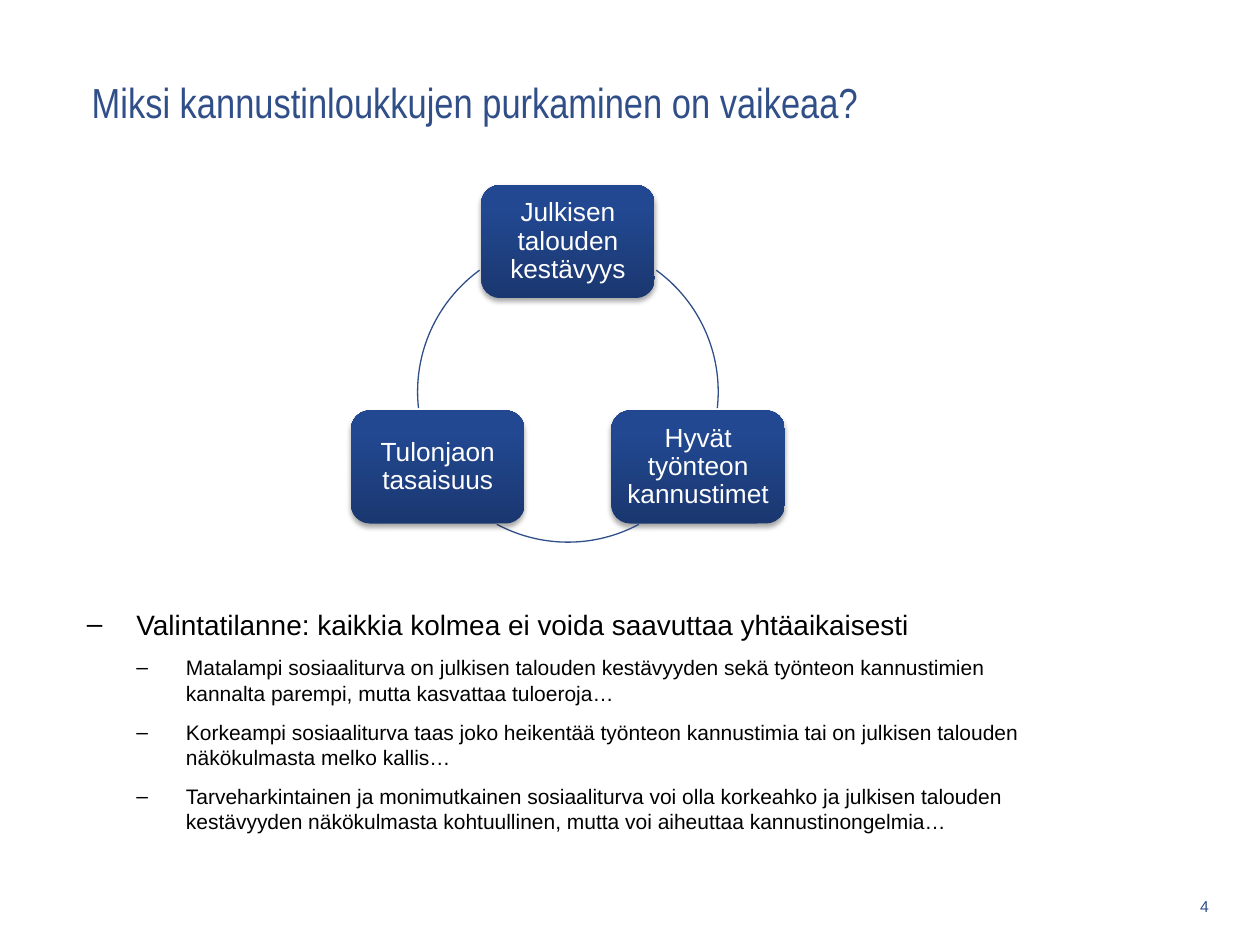
from copy import deepcopy
from dataclasses import dataclass
from math import cos, radians, sin

from lxml.etree import SubElement as Sub
from pptx import Presentation
from pptx.dml.color import RGBColor as Rgb
from pptx.enum.shapes import MSO_SHAPE as Kind
from pptx.enum.text import MSO_ANCHOR as Anchor, PP_ALIGN as Align
from pptx.oxml.ns import qn
from pptx.slide import Slide
from pptx.text.text import TextFrame as Frame, _Paragraph as Para
from pptx.util import Cm, Pt


@dataclass(frozen=True)
class Theme:
    blue: str = "304E88"
    black: str = "000000"
    white: str = "FFFFFF"
    shade: tuple = ((0, "1A376F"), (0.8, "224891"), (1, "204793"))
    sans: str = "Arial"
    slim: str = "Arial Narrow"
    title: float = 24
    lead: float = 16
    node: float = 15
    point: float = 12
    page: float = 9


@dataclass(frozen=True)
class Ring:
    x: float = 11.45
    y: float = 7.9
    r: float = 3.03


@dataclass(frozen=True)
class Node:
    text: str
    angle: float
    wide: float = 3.5
    high: float = 2.28


@dataclass(frozen=True)
class Item:
    text: str
    level: int
    size: float


LOOK = Theme()
RING = Ring()
NODES = (
    Node("Julkisen talouden kestävyys", -90),
    Node("Hyvät työnteon kannustimet", 30),
    Node("Tulonjaon tasaisuus", 150),
)
ARCS = ((306, 6.2), (61.8, 118.2), (173.8, 234))
ITEMS = (
    Item("Valintatilanne: kaikkia kolmea ei voida saavuttaa yhtäaikaisesti", 0, LOOK.lead),
    Item("Matalampi sosiaaliturva on julkisen talouden kestävyyden sekä työnteon "
         "kannustimien kannalta parempi, mutta kasvattaa tuloeroja…", 1, LOOK.point),
    Item("Korkeampi sosiaaliturva taas joko heikentää työnteon kannustimia tai on "
         "julkisen talouden näkökulmasta melko kallis…", 1, LOOK.point),
    Item("Tarveharkintainen ja monimutkainen sosiaaliturva voi olla korkeahko ja "
         "julkisen talouden kestävyyden näkökulmasta kohtuullinen, mutta voi aiheuttaa "
         "kannustinongelmia…", 1, LOOK.point),
)


def style(para: Para, size: float, color: str, face: str = LOOK.sans) -> None:
    for run in para.runs:
        run.font.size = Pt(size)
        run.font.name = face
        run.font.color.rgb = Rgb.from_string(color)


def add_text(slide: Slide, x: float, y: float, w: float, h: float,
             anchor: Anchor = Anchor.MIDDLE) -> Frame:
    frame = slide.shapes.add_textbox(Cm(x), Cm(y), Cm(w), Cm(h)).text_frame
    frame.word_wrap = True
    frame.vertical_anchor = anchor
    return frame


def add_item(para: Para, item: Item) -> None:
    para.text = item.text
    para.level = item.level
    props = para._p.get_or_add_pPr()
    props.set("marL", str(Cm(1 + item.level)))
    props.set("indent", str(Cm(-1)))
    Sub(props, qn("a:buFont"), typeface=LOOK.sans)
    Sub(props, qn("a:buChar"), char="‒")
    para.space_after = Pt(8)
    style(para, item.size, LOOK.black)


def add_node(slide: Slide, node: Node) -> None:
    turn = radians(node.angle)
    left = RING.x + RING.r * cos(turn) - node.wide / 2
    top = RING.y + RING.r * sin(turn) - node.high / 2
    box = slide.shapes.add_shape(Kind.ROUNDED_RECTANGLE, Cm(left), Cm(top),
                                 Cm(node.wide), Cm(node.high))
    box.fill.gradient()
    box.fill.gradient_angle = 90
    stops = box._element.spPr.find(".//" + qn("a:gsLst"))
    stops.append(deepcopy(stops[0]))
    for stop, (place, color) in zip(box.fill.gradient_stops, LOOK.shade):
        stop.position = place
        stop.color.rgb = Rgb.from_string(color)
    box.line.fill.background()
    box.shadow.inherit = False
    glow = Sub(box._element.spPr.find(qn("a:effectLst")), qn("a:outerShdw"),
               blurRad=str(Pt(3.1)), dist=str(Pt(1.8)), dir="5400000", rotWithShape="0")
    tint = Sub(glow, qn("a:srgbClr"), val=LOOK.black)
    Sub(tint, qn("a:alpha"), val="35000")
    frame = box.text_frame
    frame.word_wrap = True
    frame.vertical_anchor = Anchor.MIDDLE
    frame.margin_left = frame.margin_right = Cm(0.1)
    frame.margin_top = frame.margin_bottom = Cm(0.1)
    frame.text = node.text
    para = frame.paragraphs[0]
    para.alignment = Align.CENTER
    para.line_spacing = 0.9
    style(para, LOOK.node, LOOK.white)


def add_arc(slide: Slide, start: float, end: float) -> None:
    arc = slide.shapes.add_shape(Kind.ARC, Cm(RING.x - RING.r), Cm(RING.y - RING.r),
                                 Cm(2 * RING.r), Cm(2 * RING.r))
    for spot, angle in enumerate((start, end)):
        arc.adjustments[spot] = angle * 0.6
    arc.fill.background()
    arc.line.color.rgb = Rgb.from_string(LOOK.blue)
    arc.line.width = Pt(0.75)
    arc.shadow.inherit = False


def main() -> None:
    deck = Presentation()
    deck.slide_width, deck.slide_height = Cm(25.4), Cm(19.05)
    slide = deck.slides.add_slide(deck.slide_layouts[6])

    title = add_text(slide, 1.6, 0.4, 20.3, 3.3)
    title.text = "Miksi kannustinloukkujen purkaminen on vaikeaa?"
    style(title.paragraphs[0], LOOK.title, LOOK.blue, LOOK.slim)

    body = add_text(slide, 1.5, 12.12, 20.3, 5, Anchor.TOP)
    for spot, item in enumerate(ITEMS):
        add_item(body.add_paragraph() if spot else body.paragraphs[0], item)

    page = add_text(slide, 23.3, 17.87, 1.32, 0.8)
    page.text = "4"
    page.paragraphs[0].alignment = Align.RIGHT
    style(page.paragraphs[0], LOOK.page, LOOK.blue)

    for node, (start, end) in zip(NODES, ARCS):
        add_node(slide, node)
        add_arc(slide, start, end)

    deck.save("out.pptx")


if __name__ == "__main__":
    main()
